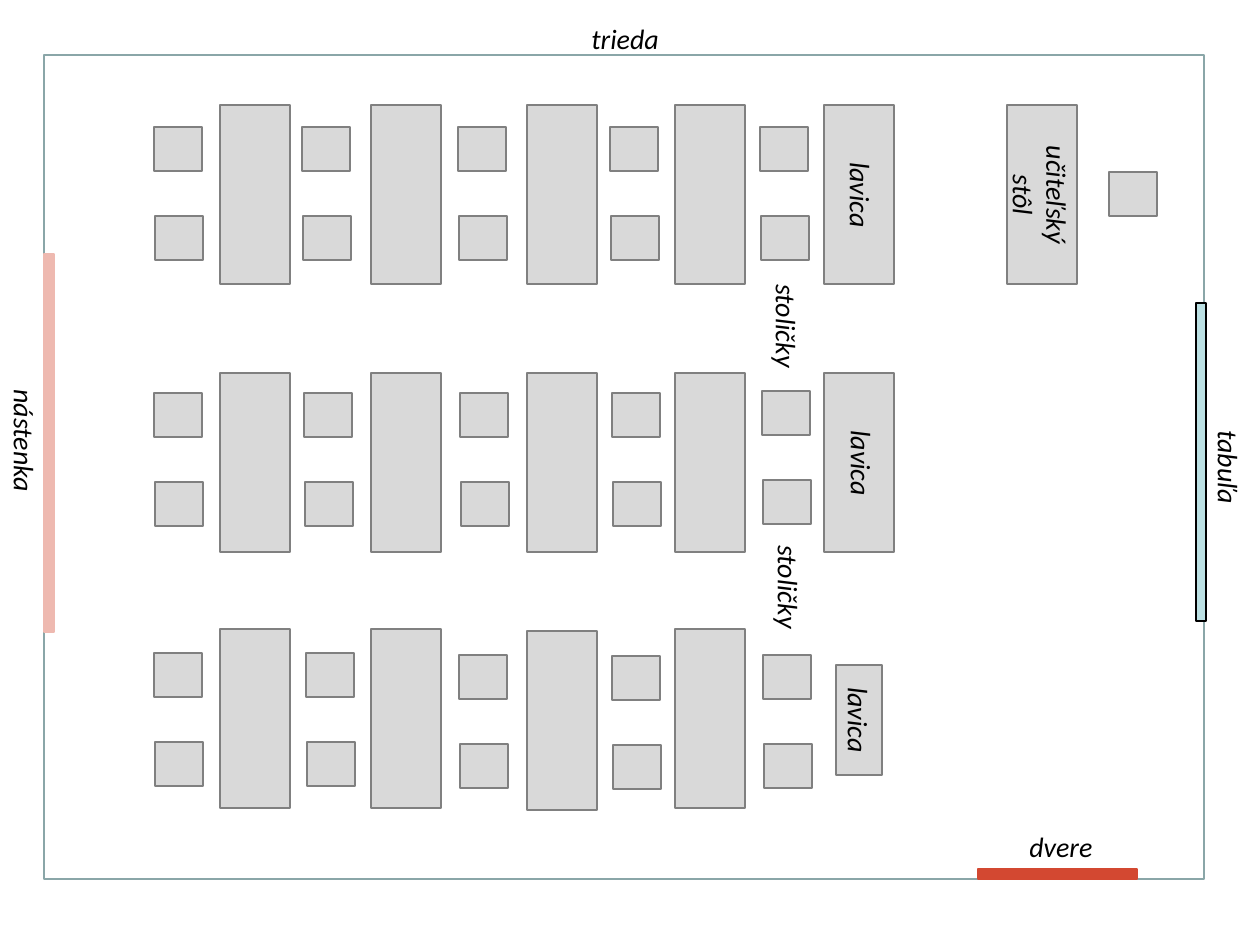
from pptx import Presentation
from pptx.dml.color import RGBColor
from pptx.enum.shapes import MSO_SHAPE
from pptx.enum.text import MSO_AUTO_SIZE, PP_ALIGN
from pptx.util import Emu, Pt

PX = 914400 // 126
RECT = MSO_SHAPE.RECTANGLE
LEFT, CENTER = PP_ALIGN.LEFT, PP_ALIGN.CENTER

GREY = RGBColor(0xD9, 0xD9, 0xD9)
DARK_GREY = RGBColor(0x80, 0x80, 0x80)
WALL = RGBColor(0x8A, 0xA6, 0xA8)
PALE_BLUE = RGBColor(0xBB, 0xE0, 0xE3)
PINK = RGBColor(0xEE, 0xB9, 0xB0)
RED = RGBColor(0xD3, 0x48, 0x31)
BLACK = RGBColor(0, 0, 0)

# Furniture sizes and places, in px as seen on the floor plan
DESK = (70, 179)
CHAIR = (48, 44)
PAIR_STEP = (1, 89)
ROOM = (44, 55, 1160, 824)
DESK_COLUMNS = (220, 371, 527, 675)
FRONT_COLUMN = 824
ROWS = [  # top of each desk, first chair of each pair
    {"desks": (105, 105, 105, 105, 105),
     "chairs": [(154, 127), (302, 127), (458, 127), (610, 127), (760, 127)]},
    {"desks": (373, 373, 373, 373, 373),
     "chairs": [(154, 393), (304, 393), (460, 393), (612, 393), (762, 391)]},
    {"desks": (629, 629, 631, 629),
     "chairs": [(154, 653), (306, 653), (459, 655), (612, 656), (763, 655)]},
]
TEACHER_DESK = (1007, 105)
TEACHER_CHAIR = (1109, 172)
FIXTURES = [  # box, fill, line
    ((1196, 303, 10, 318), PALE_BLUE, BLACK),
    ((44, 254, 10, 378), PINK, PINK),
    ((978, 869, 159, 10), RED, RED),
]

# Labels: text, centre, length and height, rotation, alignment
LABELS = [
    ("trieda", (634, 38), (110, 46), 0, LEFT),
    ("tabuľa", (1229, 473), (110, 46), 90, LEFT),
    ("nástenka", (25, 450), (146, 46), 90, LEFT),
    ("dvere", (1072, 846), (110, 46), 0, LEFT),
    ("lavica", (861, 195), (110, 46), 90, CENTER),
    ("lavica", (862, 463), (110, 46), 90, CENTER),
    ("učiteľský stôl", (1040, 195), (137, 81), 90, CENTER),
    ("stoličky", (789, 587), (110, 46), 90, CENTER),
    ("stoličky", (787, 326), (110, 46), 90, CENTER),
]
SMALL_DESK = ("lavica", (859, 720), (110, 46), 90, CENTER)
NO_WRAP = "stoličky"
LABEL_FONT = {"name": "Calibri", "size": Pt(16), "italic": True}

prs = Presentation()
prs.slide_width, prs.slide_height = Emu(1260 * PX), Emu(945 * PX)
slide = prs.slides.add_slide(prs.slide_layouts[6])


def centred_frame(centre, size):
    (x, y), (w, h) = centre, size
    return [Emu(round(v * PX)) for v in (x - w / 2, y - h / 2, w, h)]


def paint(box, fill, line, weight=0.75):
    box.shadow.inherit = False
    if fill is None:
        box.fill.background()
    else:
        box.fill.solid()
        box.fill.fore_color.rgb = fill
    box.line.color.rgb = line
    box.line.width = Pt(weight)


def add_box(x, y, w, h, fill=GREY, line=DARK_GREY, weight=0.75):
    box = slide.shapes.add_shape(RECT, *[Emu(v * PX) for v in (x, y, w, h)])
    paint(box, fill, line, weight)


def write(holder, text, rotation, align):
    holder.rotation = rotation
    frame = holder.text_frame
    frame.word_wrap = text != NO_WRAP
    frame.auto_size = MSO_AUTO_SIZE.SHAPE_TO_FIT_TEXT
    paragraph = frame.paragraphs[0]
    paragraph.alignment = align
    run = paragraph.add_run()
    run.text = text
    for key, value in LABEL_FONT.items():
        setattr(run.font, key, value)
    run.font.color.rgb = BLACK


# Room
add_box(*ROOM, fill=None, line=WALL, weight=1)

# Desks and pairs of chairs
for row in ROWS:
    for x, y in zip(DESK_COLUMNS + (FRONT_COLUMN,), row["desks"]):
        add_box(x, y, *DESK)
    for x, y in row["chairs"]:
        for seat in range(2):
            add_box(x + seat * PAIR_STEP[0], y + seat * PAIR_STEP[1], *CHAIR)

# Teacher's place
add_box(*TEACHER_DESK, *DESK)
add_box(*TEACHER_CHAIR, *CHAIR)

# Board, notice board and door
for area, fill, line in FIXTURES:
    add_box(*area, fill=fill, line=line)

# Labels and the small labelled desk
for text, centre, size, rotation, align in LABELS:
    label = slide.shapes.add_textbox(*centred_frame(centre, size))
    write(label, text, rotation, align)

text, centre, size, rotation, align = SMALL_DESK
small_desk = slide.shapes.add_shape(RECT, *centred_frame(centre, size))
paint(small_desk, GREY, DARK_GREY)
write(small_desk, text, rotation, align)

prs.save("out.pptx")
